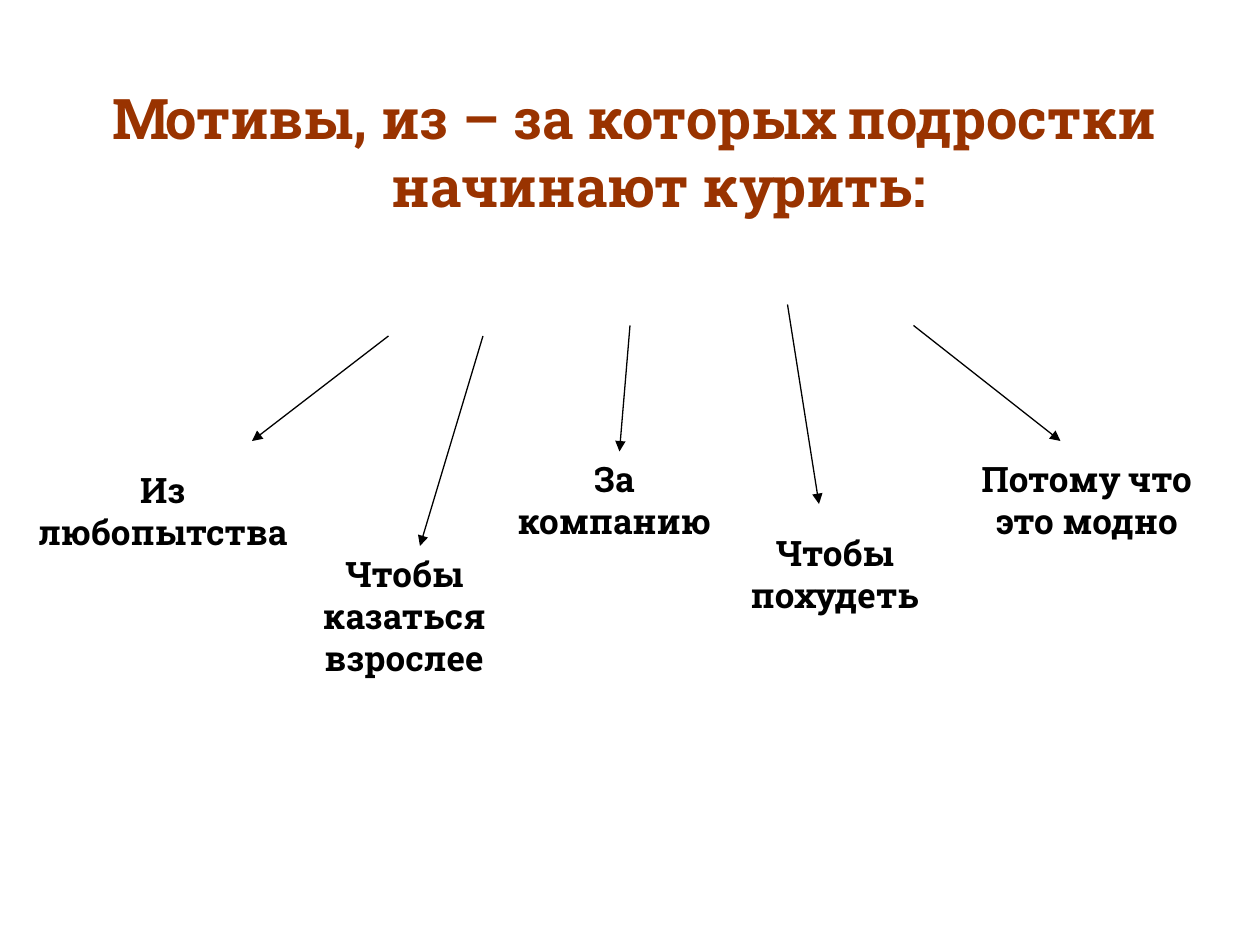
from dataclasses import dataclass

import lxml.etree
import pptx
import pptx.dml.color
import pptx.enum.shapes
import pptx.enum.text
import pptx.oxml.ns
import pptx.util

COLORS = {"title": "993300", "text": "000000"}
FONT = "Roboto Slab"
CELL = 1 / 12  # grid of 120 columns by 90 rows on a 10 by 7.5 inch slide
TITLE_INDENT = 0.38


@dataclass(frozen=True)
class Motive:
    """A label and its arrow, in grid columns and rows."""
    text: str
    column: int
    row: int
    columns: int
    lines: int
    arrow_start: tuple[int, int]
    arrow_end: tuple[int, int]


MOTIVES = [
    Motive("Из любопытства", 0, 44, 31, 2, (37, 32), (24, 42)),
    Motive("Чтобы казаться взрослее", 24, 52, 29, 3, (46, 32), (40, 52)),
    Motive("За компанию", 46, 43, 25, 2, (60, 31), (59, 43)),
    Motive("Чтобы похудеть", 67, 50, 25, 2, (75, 29), (78, 48)),
    Motive("Потому что это модно", 91, 43, 25, 2, (87, 31), (101, 42)),
]


def grid(cells: float) -> int:
    return pptx.util.Inches(cells * CELL)


def write_text(frame, text: str, *, size: float, color: str):
    """Write one bold centred paragraph and return it."""
    frame.word_wrap = True
    frame.vertical_anchor = pptx.enum.text.MSO_ANCHOR.TOP
    paragraph = frame.paragraphs[0]
    paragraph.alignment = pptx.enum.text.PP_ALIGN.CENTER
    run = paragraph.add_run()
    run.text = text
    run.font.name = FONT
    run.font.size = pptx.util.Pt(size)
    run.font.bold = True
    run.font.color.rgb = pptx.dml.color.RGBColor.from_string(COLORS[color])
    return paragraph


def add_title(slide, text: str) -> None:
    title = slide.shapes.title
    title.left, title.top, title.width, title.height = map(grid, (5, 0, 111, 85))
    frame = title.text_frame
    frame.auto_size = pptx.enum.text.MSO_AUTO_SIZE.NONE
    frame.margin_top = grid(8)
    paragraph = write_text(frame, text, size=32, color="title")
    # Hanging indent
    properties = paragraph._p.get_or_add_pPr()
    properties.set("marL", str(pptx.util.Inches(TITLE_INDENT)))
    properties.set("indent", str(-pptx.util.Inches(TITLE_INDENT)))


def add_label(slide, motive: Motive) -> None:
    label = slide.shapes.add_textbox(
        grid(motive.column), grid(motive.row), grid(motive.columns),
        pptx.util.Inches(0.1 + motive.lines / 3))
    write_text(label.text_frame, motive.text, size=20, color="text")
    label.text_frame.auto_size = pptx.enum.text.MSO_AUTO_SIZE.SHAPE_TO_FIT_TEXT


def add_arrow(slide, motive: Motive) -> None:
    ends = map(grid, motive.arrow_start + motive.arrow_end)
    arrow = slide.shapes.add_connector(
        pptx.enum.shapes.MSO_CONNECTOR.STRAIGHT, *ends)
    arrow.line.width = pptx.util.Pt(0.75)
    arrow.line.color.rgb = pptx.dml.color.RGBColor.from_string(COLORS["text"])
    # Arrowhead, and no shadow
    qn = pptx.oxml.ns.qn
    lxml.etree.SubElement(arrow.line._get_or_add_ln(), qn("a:tailEnd"), type="triangle")
    lxml.etree.SubElement(arrow._element.spPr, qn("a:effectLst"))


def main() -> None:
    presentation = pptx.Presentation()
    presentation.slide_width = grid(120)
    presentation.slide_height = grid(90)
    slide = presentation.slides.add_slide(
        presentation.slide_layouts.get_by_name("Title Only"))

    add_title(slide, "Мотивы, из – за которых подростки начинают курить:")
    for motive in MOTIVES:
        add_label(slide, motive)
    for motive in MOTIVES:
        add_arrow(slide, motive)

    presentation.save("out.pptx")


if __name__ == "__main__":
    main()
